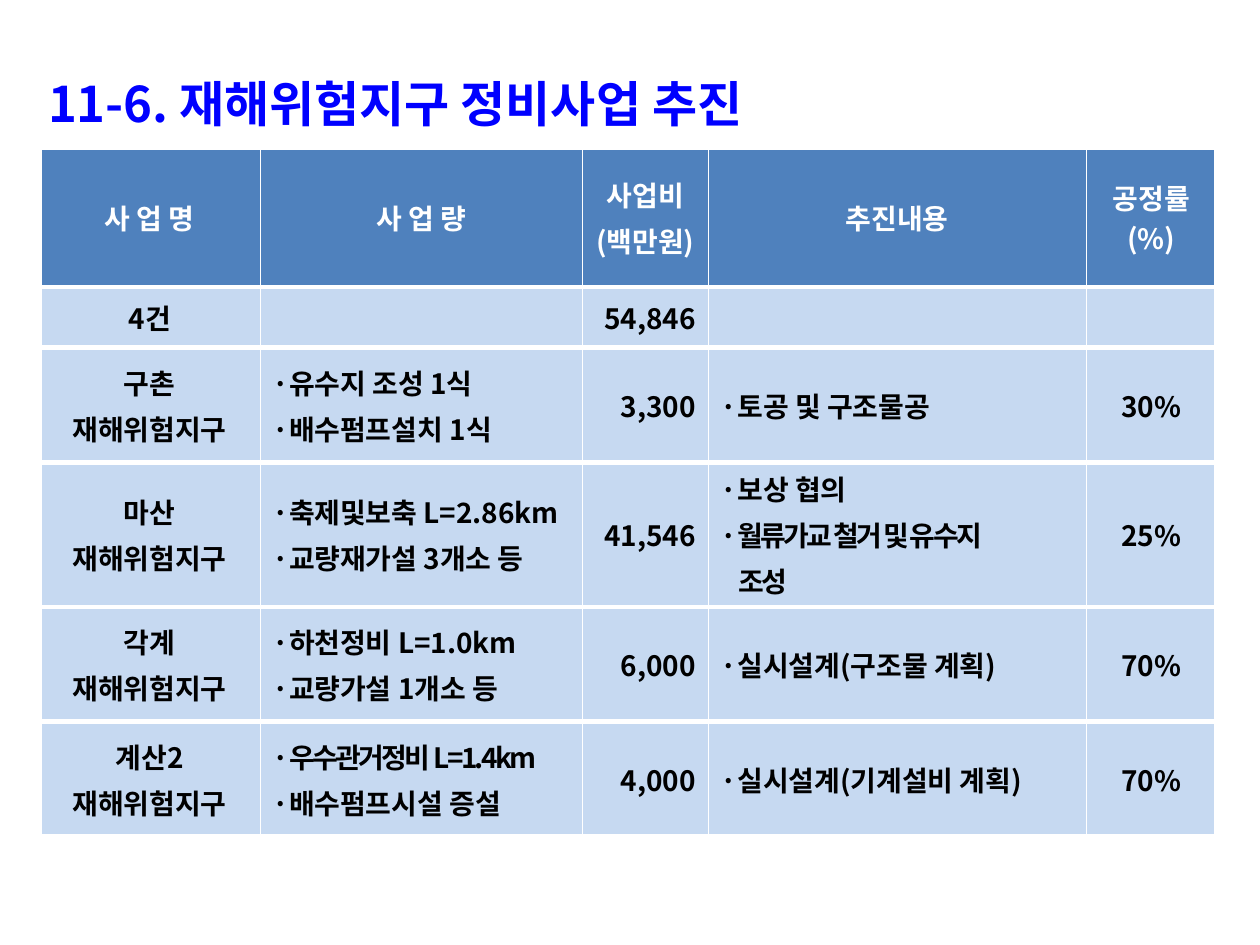
from lxml import etree
from pptx import Presentation
from pptx.dml.color import RGBColor
from pptx.enum import text
from pptx.oxml import ns
from pptx.util import Pt

FONT = "Noto Sans CJK KR"
WHITE = RGBColor(0xFF, 0xFF, 0xFF)
BLACK = RGBColor(0x00, 0x00, 0x00)
BLUE = RGBColor(0x00, 0x00, 0xFF)
STEEL = RGBColor(0x4F, 0x81, 0xBD)
PALE = RGBColor(0xC6, 0xD9, 0xF1)

LEFT, MID, RIGHT = text.PP_ALIGN.LEFT, text.PP_ALIGN.CENTER, text.PP_ALIGN.RIGHT
ALIGNS = [MID, LEFT, RIGHT, LEFT, MID]
WIDTHS = [126, 184.3, 72, 216, 74.2]
HEIGHTS = [60.5, 34.6, 65.5, 72.7, 65.5, 65.5]
TIGHT = "|"
ZONE = "재해위험지구"
ROWS = [
    ["사 업 명", "사 업 량", "사업비\n(백만원)", "추진내용", "공정률\n(%)"],
    ["4건", "", "54,846", "", ""],
    [f"구촌\n{ZONE}", "·유수지 조성 1식\n·배수펌프설치 1식", "3,300",
     "·토공 및 구조물공", "30%"],
    [f"마산\n{ZONE}", "·축제및보축 L=2.86km\n·교량재가설 3개소 등", "41,546",
     "·보상 협의\n·|월류가교 철거 및 유수지\n|조성", "25%"],
    [f"각계\n{ZONE}", "·하천정비 L=1.0km\n·교량가설 1개소 등", "6,000",
     "·실시설계(구조물 계획)", "70%"],
    [f"계산2\n{ZONE}", "·|우수관거정비 L=1.4km\n·배수펌프시설 증설", "4,000",
     "·실시설계(기계설비 계획)", "70%"],
]


def style(run, size, color):
    """Give a run its bold Korean and Latin font, size and colour."""
    font = run.font
    font.name, font.size, font.bold = FONT, Pt(size), True
    font.color.rgb = color
    east = etree.SubElement(font._element, ns.qn("a:ea"))
    east.set("typeface", FONT)


def write(para, line, color):
    """Write one table line, drawing the part after the mark tightly."""
    plain, mark, tight = line.partition(TIGHT)
    if mark and not plain:
        para._p.get_or_add_pPr().set("marL", str(Pt(10)))
    for part, space in ((plain, None), (tight, "-150")):
        if part:
            run = para.add_run()
            run.text = part
            style(run, 16, color)
            if space:
                run.font._element.set("spc", space)


def edge(cell, side, width):
    """Draw one white border of a cell."""
    line = etree.SubElement(cell._tc.get_or_add_tcPr(), ns.qn(f"a:ln{side}"))
    line.set("w", str(Pt(width)))
    fill = etree.SubElement(line, ns.qn("a:solidFill"))
    etree.SubElement(fill, ns.qn("a:srgbClr")).set("val", str(WHITE))


def fill_cell(cell, words, row, col):
    """Style one cell and write its lines."""
    head = row == 0
    edge(cell, "L", 3 if col == 0 else 0.25)
    edge(cell, "R", 3 if col == len(WIDTHS) - 1 else 0.25)
    edge(cell, "T", 3)
    edge(cell, "B", 3)
    cell.fill.solid()
    cell.fill.fore_color.rgb = STEEL if head else PALE
    cell.vertical_anchor = text.MSO_ANCHOR.MIDDLE
    frame = cell.text_frame
    for i, line in enumerate(words.split("\n")):
        para = frame.add_paragraph() if i else frame.paragraphs[0]
        para.alignment = MID if head else ALIGNS[col]
        if i and line != "(%)":
            para.space_before = Pt(3.2)
        write(para, line, WHITE if head else BLACK)


def add_title(slide, x, y, w, h):
    """Place the heading in the given box."""
    frame = slide.shapes.add_textbox(Pt(x), Pt(y), Pt(w), Pt(h)).text_frame
    frame.word_wrap = True
    frame.text = "11-6. 재해위험지구 정비사업 추진"
    style(frame.paragraphs[0].runs[0], 28, BLUE)


def add_grid(slide, x, y, w, h):
    """Place the project table in the given box."""
    frame = slide.shapes.add_table(len(ROWS), len(WIDTHS), Pt(x), Pt(y), Pt(w), Pt(h))
    table = frame.table
    table.first_row = table.horz_banding = False
    for col, width in zip(table.columns, WIDTHS):
        col.width = Pt(width)
    for row, height in zip(table.rows, HEIGHTS):
        row.height = Pt(height)
    for r, row in enumerate(ROWS):
        for c, words in enumerate(row):
            fill_cell(table.cell(r, c), words, r, c)


def main():
    """Build and save the slide."""
    deck = Presentation()
    deck.slide_width, deck.slide_height = Pt(720), Pt(540)
    slide = deck.slides.add_slide(deck.slide_layouts[6])
    add_grid(slide, 22.5, 84.5, sum(WIDTHS), sum(HEIGHTS))
    add_title(slide, 20.4, 38.2, 663.6, 50.4)
    deck.save("out.pptx")


if __name__ == "__main__":
    main()
